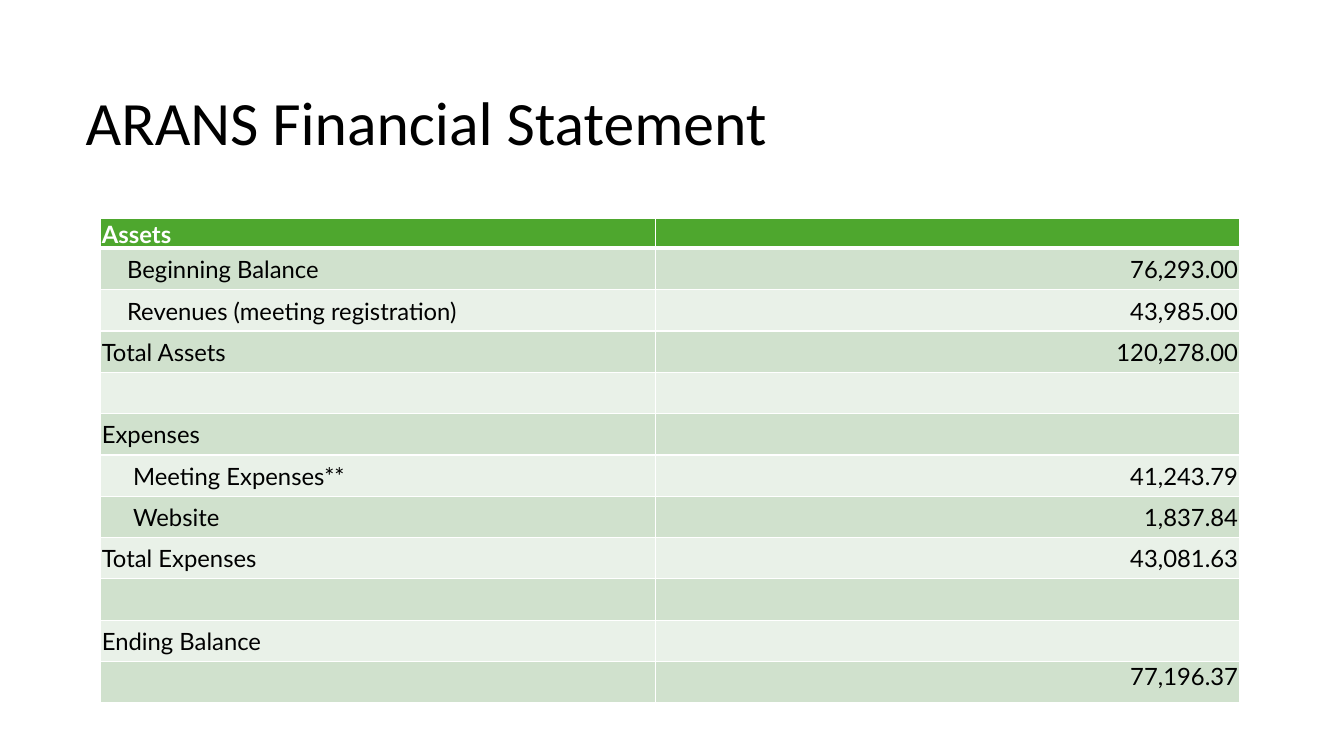
from typing import NamedTuple

from lxml.etree import SubElement
from pptx import Presentation
from pptx.dml.color import RGBColor
from pptx.enum.text import MSO_ANCHOR as Anchor, PP_ALIGN as Align
from pptx.oxml.ns import qn
from pptx.util import Inches, Pt

COLORS = {
    "white": "FFFFFF",
    "black": "000000",
    "header": "4EA72E",
    "odd": "D0E1CD",
    "even": "E9F1E8",
}
BODY_SIZE = 17
INSET = 0.01


class Entry(NamedTuple):
    label: str = ""
    amount: str = ""
    indent: float = 0


ENTRIES = [
    Entry("Assets"),
    Entry("Beginning Balance", "76,293.00", 0.25),
    Entry("Revenues (meeting registration)", "43,985.00", 0.25),
    Entry("Total Assets", "120,278.00"),
    Entry(),
    Entry("Expenses"),
    Entry("Meeting Expenses**", "41,243.79", 0.31),
    Entry("Website", "1,837.84", 0.31),
    Entry("Total Expenses", "43,081.63"),
    Entry(),
    Entry("Ending Balance"),
    Entry("", "77,196.37"),
]


def rgb(name: str) -> RGBColor:
    return RGBColor.from_string(COLORS[name])


def add_borders(cell, top: float, bottom: float) -> None:
    tc_pr = cell._tc.get_or_add_tcPr()
    for tag, width in (("a:lnL", 1), ("a:lnR", 1), ("a:lnT", top), ("a:lnB", bottom)):
        ln = SubElement(tc_pr, qn(tag), w=str(Pt(width)))
        fill = SubElement(ln, qn("a:solidFill"))
        SubElement(fill, qn("a:srgbClr"), val=COLORS["white"])


def fill_cell(cell, text: str, row: int, indent: float, align: Align) -> None:
    is_header = row == 0
    add_borders(cell, top=3 if row == 1 else 1, bottom=3 if is_header else 1)
    cell.fill.solid()
    cell.fill.fore_color.rgb = rgb("header" if is_header else "odd" if row % 2 else "even")
    cell.margin_left = Inches(INSET + indent)
    cell.margin_right = cell.margin_top = Inches(INSET)
    cell.margin_bottom = 0
    is_closing_row = row == len(ENTRIES) - 1
    cell.vertical_anchor = Anchor.TOP if is_closing_row else Anchor.MIDDLE

    p = cell.text_frame.paragraphs[0]
    p.alignment = align
    p.font.name = "Lato"
    p.font.size = Pt(BODY_SIZE)
    p.font.bold = is_header
    p.font.color.rgb = rgb("white" if is_header else "black")
    if text:
        p.add_run().text = text
    else:
        SubElement(p._p, qn("a:endParaRPr"), sz=str(BODY_SIZE * 100))


def add_title(slide) -> None:
    title = slide.shapes.title
    title.left, title.top = Inches(0.75), Inches(0.74)
    title.width, title.height = Inches(11.46), Inches(1.27)
    tf = title.text_frame
    tf.text = "ARANS Financial Statement"
    tf.vertical_anchor = Anchor.TOP
    tf.margin_top = Inches(0.09)
    p = tf.paragraphs[0]
    p.alignment = Align.LEFT
    p.font.name = "Calibri"
    p.font.size = Pt(44)
    p.font.color.rgb = rgb("black")


def add_statement(slide) -> None:
    frame = slide.shapes.add_table(
        len(ENTRIES), 2, Inches(1), Inches(2.17), Inches(11.29), Inches(4.75)
    )
    table = frame.table
    for column, width in zip(table.columns, (5.5, 5.79)):
        column.width = Inches(width)
    for i, entry in enumerate(ENTRIES):
        table.rows[i].height = Inches(0.41 if i else 0.24)
        fill_cell(table.cell(i, 0), entry.label, i, entry.indent, Align.LEFT)
        fill_cell(table.cell(i, 1), entry.amount, i, 0, Align.RIGHT)


def main() -> None:
    prs = Presentation()
    prs.slide_width, prs.slide_height = Inches(13.33), Inches(7.5)
    slide = prs.slides.add_slide(prs.slide_layouts[5])
    add_title(slide)
    add_statement(slide)
    prs.save("out.pptx")


if __name__ == "__main__":
    main()
